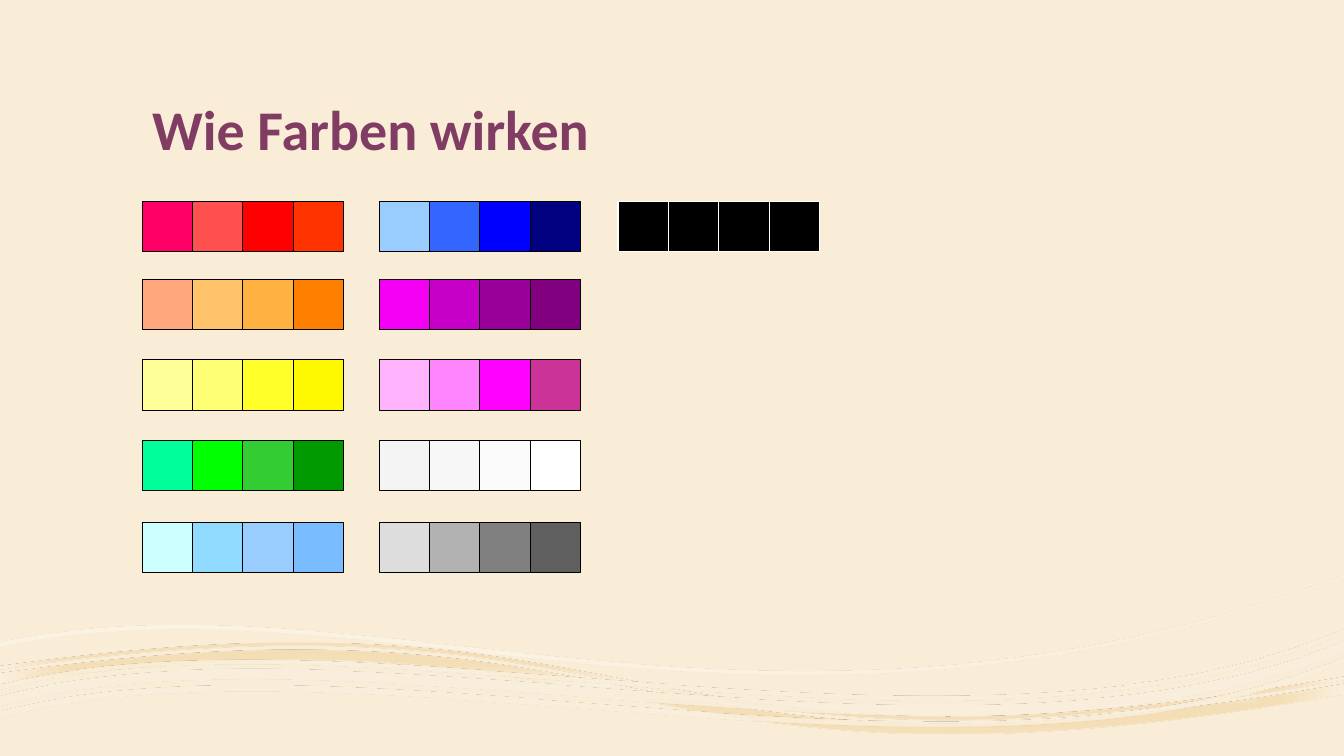
from math import cos, radians, sin

from pptx import Presentation
from pptx.dml.color import RGBColor
from pptx.enum.shapes import MSO_SHAPE
from pptx.enum.text import MSO_ANCHOR, PP_ALIGN
from pptx.oxml import parse_xml
from pptx.oxml.ns import nsdecls, qn
from pptx.util import Inches, Pt

CREAM = RGBColor(0xF9, 0xED, 0xD7)
PALE_SAND = RGBColor(0xFA, 0xF1, 0xDF)
SAND = RGBColor(0xF4, 0xDE, 0xB7)
DEEP_SAND = RGBColor(0xF4, 0xDD, 0xB3)
LIGHT_CREAM = RGBColor(0xFA, 0xEF, 0xDC)
PLUM = RGBColor(0x80, 0x3C, 0x63)
BLACK = RGBColor(0, 0, 0)
WHITE = RGBColor(0xFF, 0xFF, 0xFF)

CELL = 0.5
COLUMNS = (1.41, 3.76, 6.13)
ROWS = (2, 2.77, 3.57, 4.37, 5.18)
PALETTES = (
    ("FF0066 FF5050 FF0000 FF3300", "FFA87D FFC36B FFB241 FE7F00",
     "FFFF99 FFFF75 FFFF29 FEF800", "00FF99 00FF00 33CC33 009900",
     "CCFFFF 91DAFF 99CCFF 79BCFF"),
    ("99CCFF 3366FF 0000FF 000080", "F400F4 C600C6 990099 800080",
     "FFB3FF FF85FF FE00FE CC3399", "F4F4F4 F7F7F7 FBFBFB FFFFFF",
     "DDDDDD B2B2B2 808080 5F5F5F"),
    ("000000 000000 000000 000000",),
)

TILT = -3.5
CENTRE_GLOW = ('<a:path path="shape"><a:fillToRect l="50000" t="50000" '
               'r="50000" b="50000"/></a:path>')
CORNER_GLOW = '<a:path path="rect"><a:fillToRect l="100000" t="100000"/></a:path>'
DIAGONAL = '<a:lin ang="2700000" scaled="0"/>'


def ribbon(right, lower, left, upper, lower_pull, upper_pull):
    """Return the two edge curves of a ribbon between the slide's sides."""
    return (
        ((13.33, lower), *lower_pull, (0, left)),
        ((0, upper), *upper_pull, (13.33, right)),
    )


def crest(top, bottom):
    """Return the three curves of the wave that swells at the left."""
    return (
        ((3.06, top), (6.7, top + 0.02), (7.38, top + 1.37), (13.33, top + 0.33)),
        ((13.33, bottom), (6.02, bottom + 1.28), (6.67, bottom - 1.05),
         (0, bottom - 0.1)),
        ((0, top + 0.23), (1.24, top + 0.06), (2.22, top - 0.01), (3.06, top)),
    )


WAVES = (
    ((0.01, 6.12, 13.31, 1.35),
     [crest(6.45, 6.88), crest(6.38, 6.74)],
     ((0, PALE_SAND, 90), (18, SAND, 100), (37, DEEP_SAND, 90), (100, PALE_SAND, 100)),
     CENTRE_GLOW),
    ((0.03, 5.88, 13.35, 1.71),
     [ribbon(5.7, 5.73, 6.41, 6.37, ((7.54, 7.88), (3.73, 5.63)),
             ((3.73, 5.59), (7.54, 7.84)))],
     ((36, WHITE, 30), (100, CREAM, 48)), DIAGONAL),
    ((-0.01, 6.25, 13.36, 1.15),
     [ribbon(6.52, 6.57, 7.12, 7.06, ((9.55, 8.15), (3.49, 6.18)),
             ((3.49, 6.12), (9.55, 8.1))),
      ribbon(6.36, 6.46, 7, 6.91, ((9.55, 8.04), (3.49, 6.06)),
             ((3.49, 5.96), (9.55, 7.94))),
      ribbon(6.24, 6.28, 6.84, 6.8, ((9.58, 7.9), (3.51, 5.93)),
             ((3.51, 5.89), (9.58, 7.86)))],
     ((36, WHITE, 47), (100, LIGHT_CREAM, 82)), CORNER_GLOW),
)


def level(point, frame):
    """Turn a point back by the tilt around the middle of a frame."""
    left, top, width, height = frame
    middle, centre = left + width / 2, top + height / 2
    angle = radians(-TILT)
    across, down = point[0] - middle, point[1] - centre
    return (Inches(middle + across * cos(angle) - down * sin(angle)),
            Inches(centre + across * sin(angle) + down * cos(angle)))


def bend_lines(outline):
    """Turn each run of four knots into a start and a cubic curve."""
    knots = [knot for knot in outline if knot.tag != qn("a:close")]
    for index in range(0, len(knots), 4):
        start, *pulls = knots[index:index + 4]
        curve = start.makeelement(qn("a:cubicBezTo"))
        start.addnext(curve)
        for pull in pulls:
            curve.append(pull[0])
            outline.remove(pull)


def fit_frame(wave, outline, frame):
    """Give a wave its frame while its points stay in place."""
    left, top, width, height = (Inches(length) for length in frame)
    for point in outline.iter(qn("a:pt")):
        point.set("x", str(int(point.get("x")) + wave.left - left))
        point.set("y", str(int(point.get("y")) + wave.top - top))
    outline.set("w", str(width))
    outline.set("h", str(height))
    wave.left, wave.top, wave.width, wave.height = left, top, width, height


def fill_gradient(shape, stops, direction):
    """Fill a shape with a gradient of partly transparent stops."""
    marks = "".join(
        f'<a:gs pos="{place * 1000}"><a:srgbClr val="{color}">'
        f'<a:alpha val="{opacity * 1000}"/></a:srgbClr></a:gs>'
        for place, color, opacity in stops)
    gradient = parse_xml(f'<a:gradFill {nsdecls("a")} rotWithShape="1">'
                         f'<a:gsLst>{marks}</a:gsLst>{direction}</a:gradFill>')
    shape.fill.background()
    properties = shape.element.spPr
    properties.replace(properties.find(qn("a:noFill")), gradient)


def add_wave(page, frame, contours, stops, direction):
    """Add one tilted wave made of closed curved contours."""
    first, *others = [[level(point, frame) for curve in contour for point in curve]
                      for contour in contours]
    builder = page.shapes.build_freeform(*first[0])
    builder.add_line_segments(first[1:], close=True)
    for knots in others:
        builder.move_to(*knots[0])
        builder.add_line_segments(knots[1:], close=True)
    wave = builder.convert_to_shape()
    outline = next(wave.element.iter(qn("a:path")))
    bend_lines(outline)
    fit_frame(wave, outline, frame)
    wave.rotation = TILT
    wave.shadow.inherit = False
    wave.line.fill.background()
    fill_gradient(wave, stops, direction)
    return wave


def add_waves(page):
    """Place the group of waves behind the title."""
    group = page.shapes.add_group_shape([add_wave(page, *wave) for wave in WAVES])
    page.shapes.title.element.addprevious(group.element)


def format_title(page, text):
    """Fill, place and format the title placeholder."""
    title = page.shapes.title
    title.left, title.top = Inches(COLUMNS[0]), Inches(0.33)
    title.width, title.height = Inches(10.5), Inches(1.33)
    title.text_frame.text = text
    title.text_frame.vertical_anchor = MSO_ANCHOR.BOTTOM
    para = title.text_frame.paragraphs[0]
    para.alignment = PP_ALIGN.LEFT
    para.line_spacing = 0.9
    font = para.runs[0].font
    font.name, font.size, font.bold = "Calibri", Pt(40), True
    font.color.rgb = PLUM


def add_palette(page, left, top, colors):
    """Add a grouped row of touching colour squares."""
    group = page.shapes.add_group_shape()
    for index, color in enumerate(colors):
        box = group.shapes.add_shape(
            MSO_SHAPE.RECTANGLE, Inches(left + index * CELL), Inches(top),
            Inches(CELL), Inches(CELL))
        box.shadow.inherit = False
        box.fill.solid()
        box.fill.fore_color.rgb = color
        box.line.color.rgb = WHITE if color == BLACK else BLACK
        box.line.width = Pt(0.75)


def main():
    """Build the slide and save it."""
    deck = Presentation()
    deck.slide_width, deck.slide_height = Inches(13.33), Inches(7.5)
    page = deck.slides.add_slide(deck.slide_layouts[5])
    page.background.fill.solid()
    page.background.fill.fore_color.rgb = CREAM
    format_title(page, "Wie Farben wirken")
    add_waves(page)
    for left, palettes in zip(COLUMNS, PALETTES):
        for top, palette in zip(ROWS, palettes):
            colors = [RGBColor.from_string(code) for code in palette.split()]
            add_palette(page, left, top, colors)
    deck.save("out.pptx")


if __name__ == "__main__":
    main()
